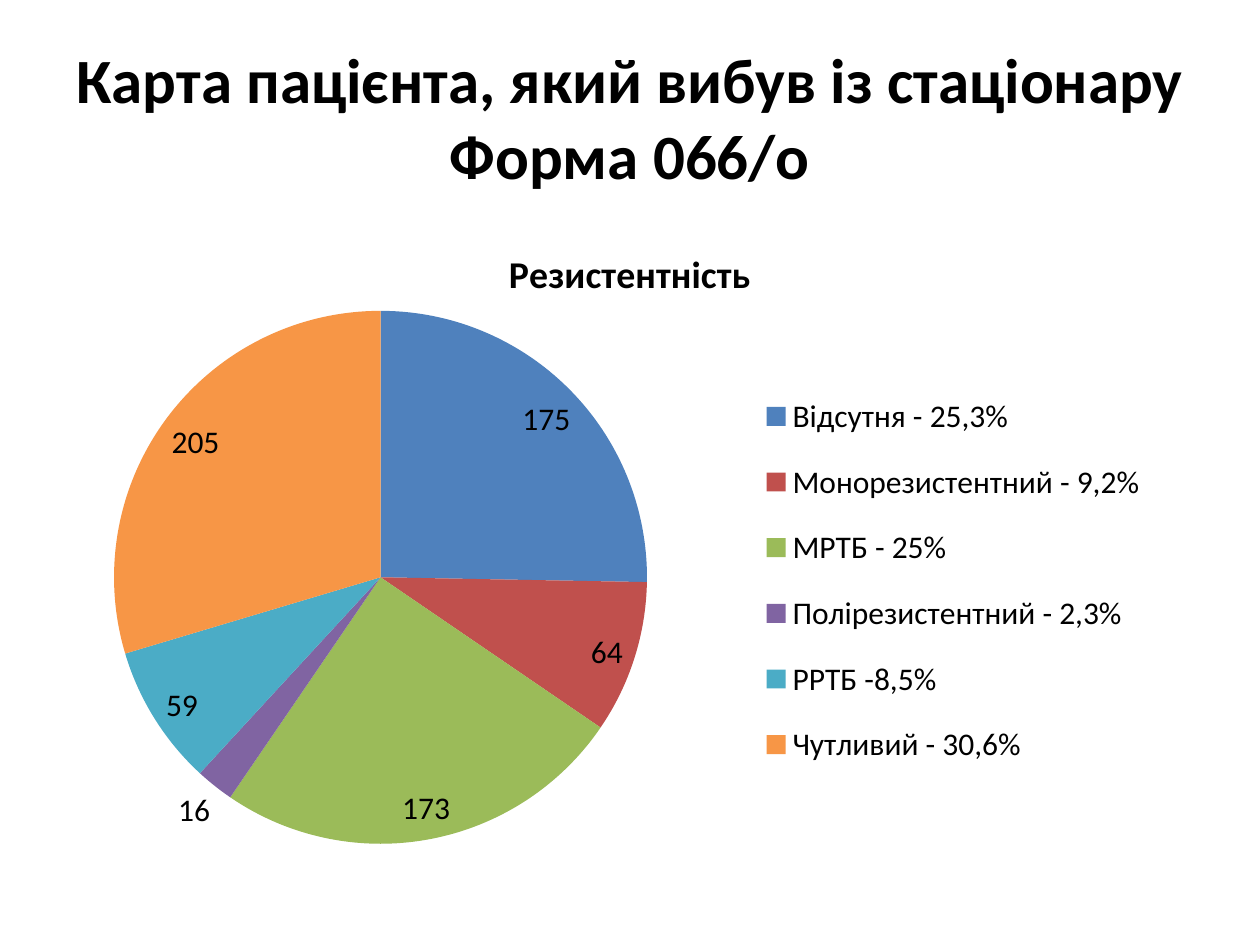
"""Builds a slide with a pie chart of resistance among discharged patients."""
import lxml.etree
import pptx
import pptx.chart.data
import pptx.dml.color
import pptx.enum.chart
import pptx.enum.text
import pptx.oxml.ns
import pptx.util

HEADING = "Карта пацієнта, який вибув із стаціонару\nФорма 066/о"
CHART_TITLE = "Резистентність"
BLACK = pptx.dml.color.RGBColor(0x00, 0x00, 0x00)
BLUE = pptx.dml.color.RGBColor(0x4F, 0x81, 0xBD)
RED = pptx.dml.color.RGBColor(0xC0, 0x50, 0x4D)
GREEN = pptx.dml.color.RGBColor(0x9B, 0xBB, 0x59)
PURPLE = pptx.dml.color.RGBColor(0x80, 0x64, 0xA2)
TEAL = pptx.dml.color.RGBColor(0x4B, 0xAC, 0xC6)
ORANGE = pptx.dml.color.RGBColor(0xF7, 0x96, 0x46)
RESISTANCE = [
    ("Відсутня - 25,3%", 175, BLUE),
    ("Монорезистентний - 9,2%", 64, RED),
    ("МРТБ - 25%", 173, GREEN),
    ("Полірезистентний - 2,3%", 16, PURPLE),
    ("РРТБ -8,5%", 59, TEAL),
    ("Чутливий - 30,6%", 205, ORANGE),
]
FONT = "Calibri"
WIDTH, HEIGHT = pptx.util.Inches(10), pptx.util.Inches(7.5)
MARGIN = int(WIDTH * 0.05)
CONTENT_WIDTH = WIDTH - 2 * MARGIN
HEADING_TOP, HEADING_HEIGHT = int(HEIGHT * 0.04), pptx.util.Inches(1.25)
CHART_TOP, CHART_HEIGHT = pptx.util.Inches(1.75), pptx.util.Inches(5.15)
PIE_AREA = {"x": 0.045, "y": 0.12, "w": 0.47, "h": 0.86}
LEGEND_AREA = {"x": 0.59, "y": 0.23, "w": 0.39, "h": 0.65}


def style(font, size, bold=False):
    font.name, font.size, font.bold = FONT, pptx.util.Pt(size), bold
    font.color.rgb = BLACK


def write(frame, text, size, bold=False, align=pptx.enum.text.PP_ALIGN.CENTER):
    paragraph = frame.paragraphs[0]
    paragraph.text = text
    paragraph.alignment = align
    for run in paragraph.runs:
        style(run.font, size, bold)


def place(parent, index, area, inner=False):
    qn = pptx.oxml.ns.qn
    for old in parent.findall(qn("c:layout")):
        parent.remove(old)
    layout = parent.makeelement(qn("c:layout"), {})
    parent.insert(index, layout)
    manual = lxml.etree.SubElement(layout, qn("c:manualLayout"))
    settings = [("layoutTarget", "inner")] if inner else []
    settings += [("xMode", "edge"), ("yMode", "edge")] + list(area.items())
    for tag, value in settings:
        lxml.etree.SubElement(manual, qn("c:" + tag)).set("val", str(value))


def add_heading(slide):
    heading = slide.shapes.add_textbox(MARGIN, HEADING_TOP, CONTENT_WIDTH, HEADING_HEIGHT)
    frame = heading.text_frame
    frame.word_wrap = True
    frame.vertical_anchor = pptx.enum.text.MSO_ANCHOR.MIDDLE
    write(frame, HEADING, 36, bold=True)


def add_pie(slide):
    data = pptx.chart.data.CategoryChartData()
    data.categories = [label for label, _, _ in RESISTANCE]
    data.add_series(CHART_TITLE, [count for _, count, _ in RESISTANCE])
    chart = slide.shapes.add_chart(
        pptx.enum.chart.XL_CHART_TYPE.PIE,
        MARGIN, CHART_TOP, CONTENT_WIDTH, CHART_HEIGHT, data).chart
    style(chart.font, 18)
    chart.has_title = True
    write(chart.chart_title.text_frame, CHART_TITLE, 21.6, bold=True)

    chart.has_legend = True
    chart.legend.position = pptx.enum.chart.XL_LEGEND_POSITION.RIGHT
    chart.legend.include_in_layout = False
    style(chart.legend.font, 18)

    plot = chart.plots[0]
    plot.vary_by_categories = True
    plot.has_data_labels = True
    labels = plot.data_labels
    labels.show_value, labels.show_percentage = True, False
    labels.position = pptx.enum.chart.XL_LABEL_POSITION.BEST_FIT
    style(labels.font, 18)
    for index, (_, _, color) in enumerate(RESISTANCE):
        fill = plot.series[0].points[index].format.fill
        fill.solid()
        fill.fore_color.rgb = color

    chart_space = chart.element
    place(chart_space.find(".//" + pptx.oxml.ns.qn("c:plotArea")), 0, PIE_AREA, inner=True)
    place(chart_space.find(".//" + pptx.oxml.ns.qn("c:legend")), 1, LEGEND_AREA)


def main():
    deck = pptx.Presentation()
    deck.slide_width, deck.slide_height = WIDTH, HEIGHT
    slide = deck.slides.add_slide(deck.slide_layouts[6])
    add_heading(slide)
    add_pie(slide)
    deck.save("out.pptx")


if __name__ == "__main__":
    main()
